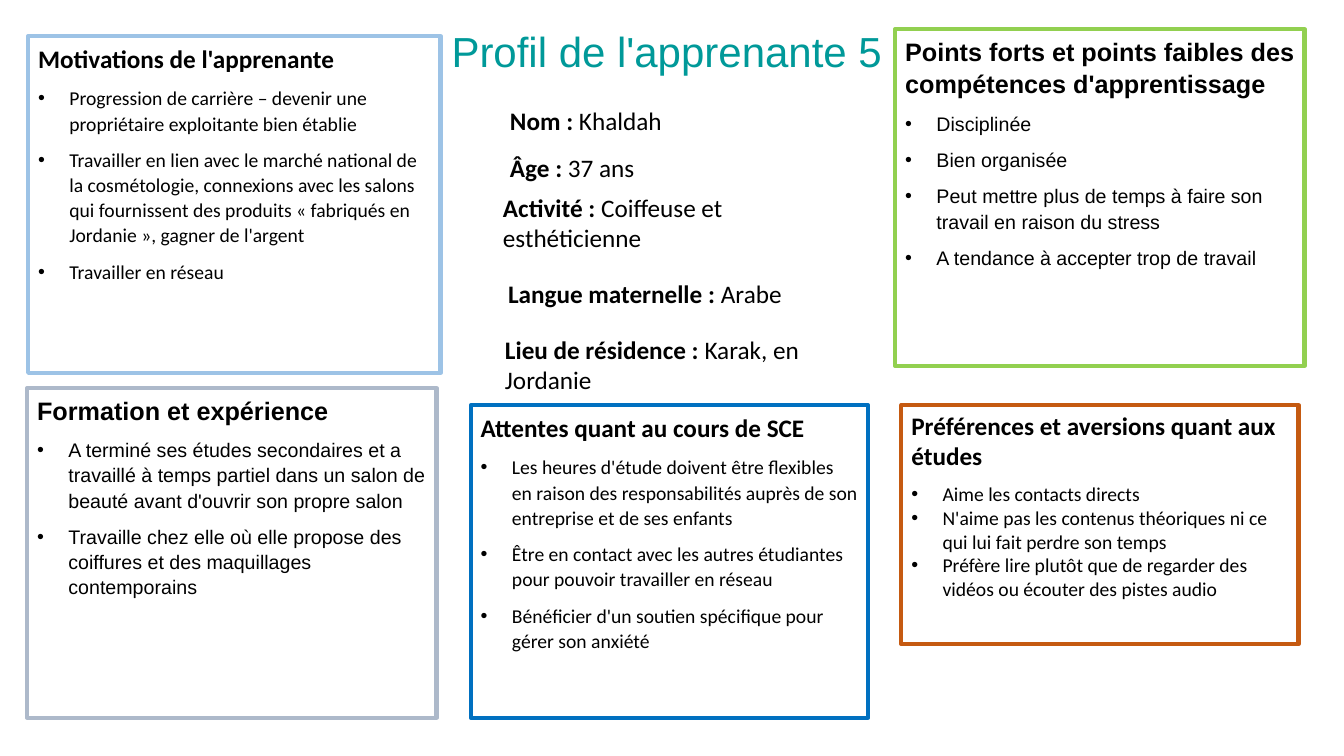
"""Build the learner profile slide: six facts framed by five cards."""
from dataclasses import dataclass

from lxml.etree import SubElement
from pptx import Presentation
from pptx.dml.color import RGBColor
from pptx.enum.shapes import MSO_SHAPE
from pptx.enum.text import MSO_ANCHOR, MSO_AUTO_SIZE, PP_ALIGN
from pptx.oxml.ns import qn
from pptx.util import Emu, Pt


@dataclass(frozen=True)
class Theme:
    ink: str = "000000"
    paper: str = "FFFFFF"
    teal: str = "009999"
    blue: str = "0070C0"
    sky: str = "9DC3E6"
    green: str = "92D050"
    slate: str = "ADB9CA"
    rust: str = "C55A11"
    sans: str = "Arial"
    body: str = "Calibri"
    title_size: int = 30
    heading_size: int = 18
    bullet_size: int = 14
    border: int = 3


theme = Theme()
PX = 9144
BULLET_INDENT = 31


def px(*lengths):
    return [Emu(length * PX) for length in lengths]


def style(run, font, size, color=theme.ink, bold=False):
    run.font.name = font
    run.font.size = Pt(size)
    run.font.bold = bold
    run.font.color.rgb = RGBColor.from_string(color)


cards = [
    ((467, 402, 394, 310), theme.blue, theme.body, "Attentes quant au cours de SCE", [
        "Les heures d'étude doivent être flexibles en raison des responsabilités "
        "auprès de son entreprise et de ses enfants",
        "Être en contact avec les autres étudiantes pour pouvoir travailler en réseau",
        "Bénéficier d'un soutien spécifique pour gérer son anxiété",
    ]),
    ((28, 36, 409, 334), theme.sky, theme.body, "Motivations de l'apprenante", [
        "Progression de carrière – devenir une propriétaire exploitante bien établie",
        "Travailler en lien avec le marché national de la cosmétologie, connexions "
        "avec les salons qui fournissent des produits « fabriqués en Jordanie », "
        "gagner de l'argent",
        "Travailler en réseau",
    ]),
    ((888, 29, 406, 334), theme.green, theme.sans,
     "Points forts et points faibles des compétences d'apprentissage", [
         "Disciplinée",
         "Bien organisée",
         "Peut mettre plus de temps à faire son travail en raison du stress",
         "A tendance à accepter trop de travail",
     ]),
    ((27, 385, 406, 327), theme.slate, theme.sans, "Formation et expérience", [
        "A terminé ses études secondaires et a travaillé à temps partiel dans un "
        "salon de beauté avant d'ouvrir son propre salon",
        "Travaille chez elle où elle propose des coiffures et des maquillages "
        "contemporains",
    ]),
    ((894, 402, 394, 237), theme.rust, theme.body,
     "Préférences et aversions quant aux études", [
         "Aime les contacts directs",
         "N'aime pas les contenus théoriques ni ce qui lui fait perdre son temps",
         "Préfère lire plutôt que de regarder des vidéos ou écouter des pistes audio",
     ]),
]

facts = [
    ((496, 100, 376, 40), "Nom :", " Khaldah"),
    ((496, 146, 317, 40), "Âge :", " 37 ans"),
    ((489, 186, 345, 71), "Activité :", " Coiffeuse et esthéticienne"),
    ((494, 271, 345, 40), "Langue maternelle :", " Arabe"),
    ((491, 327, 345, 40), "Lieu de résidence :", " Karak, en Jordanie"),
]

deck = Presentation()
deck.slide_width, deck.slide_height = px(1333, 750)
slide = deck.slides.add_slide(deck.slide_layouts[6])

for box, border_color, font, heading, points in cards:
    card = slide.shapes.add_shape(MSO_SHAPE.RECTANGLE, *px(*box))
    card.shadow.inherit = False
    card.line.color.rgb = RGBColor.from_string(border_color)
    card.line.width = Pt(theme.border)
    compact = border_color == theme.rust
    if compact:
        card.fill.background()
    else:
        card.fill.solid()
        card.fill.fore_color.rgb = RGBColor.from_string(theme.paper)
    frame = card.text_frame
    frame.word_wrap = True
    frame.vertical_anchor = MSO_ANCHOR.TOP
    frame.text = "\n".join([heading, *points])
    for index, paragraph in enumerate(frame.paragraphs):
        paragraph.alignment = PP_ALIGN.LEFT
        if not compact:
            paragraph.line_spacing = 1.07
            paragraph.space_after = Pt(8)
        elif index == 1:
            paragraph.line_spacing = 1.5
        if index == 0:
            style(paragraph.runs[0], font, theme.heading_size, bold=True)
            continue
        style(paragraph.runs[0], font, theme.bullet_size)
        properties = paragraph._p.get_or_add_pPr()
        properties.set("marL", str(BULLET_INDENT * PX))
        properties.set("indent", str(-BULLET_INDENT * PX))
        SubElement(properties, qn("a:buFont"), typeface=theme.sans)
        SubElement(properties, qn("a:buChar"), char="•")

title = slide.shapes.add_textbox(*px(438, 26, 451, 56)).text_frame
title.word_wrap = False
title.auto_size = MSO_AUTO_SIZE.SHAPE_TO_FIT_TEXT
title.text = "Profil de l'apprenante 5"
title.paragraphs[0].line_spacing = 0.9
title.paragraphs[0].space_before = Pt(10)
style(title.paragraphs[0].runs[0], theme.sans, theme.title_size, theme.teal)

for box, label, answer in facts:
    fact = slide.shapes.add_textbox(*px(*box)).text_frame
    fact.word_wrap = True
    fact.auto_size = MSO_AUTO_SIZE.SHAPE_TO_FIT_TEXT
    for words, bold in ((label, True), (answer, False)):
        run = fact.paragraphs[0].add_run()
        run.text = words
        style(run, theme.body, theme.heading_size, bold=bold)

deck.save("out.pptx")
